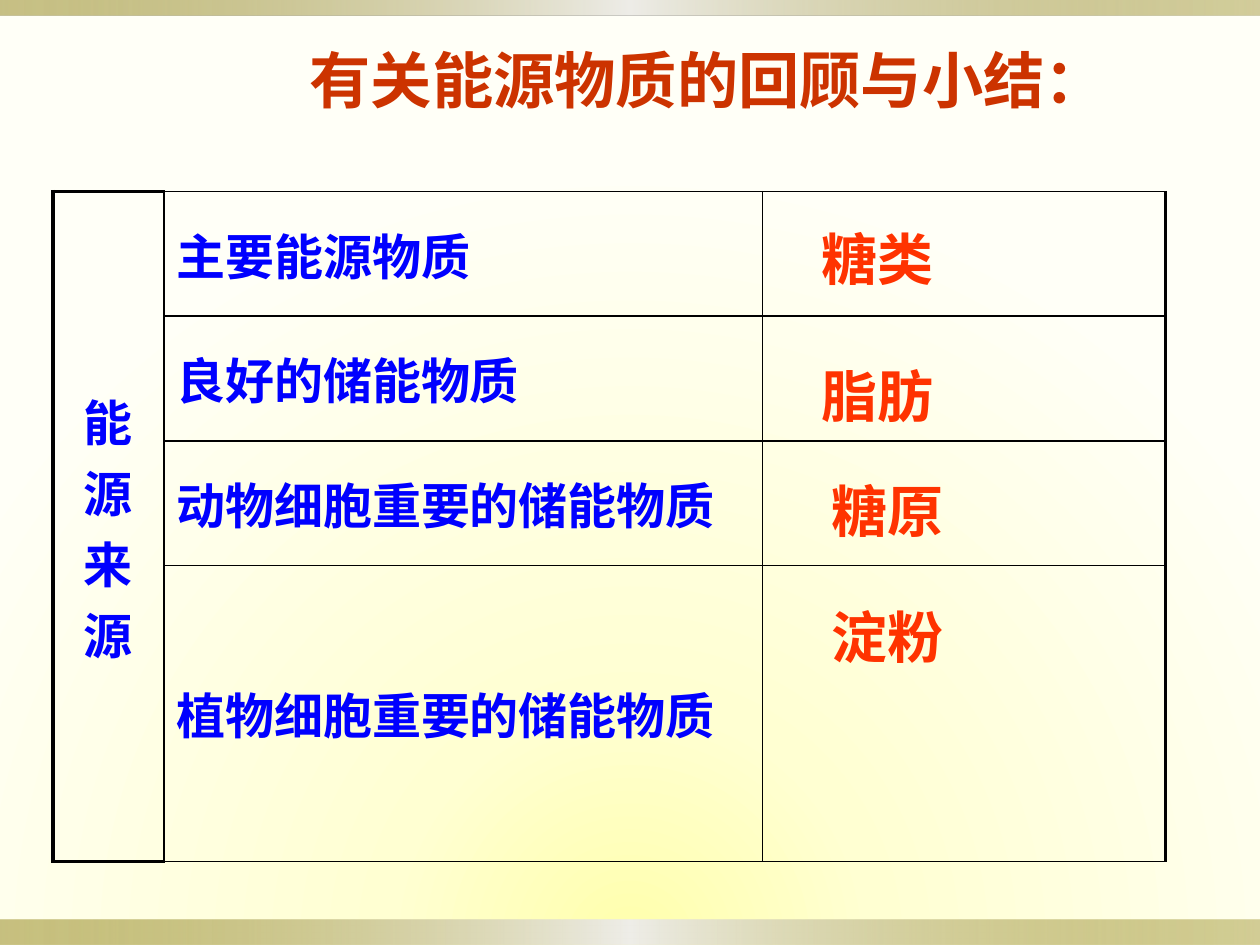
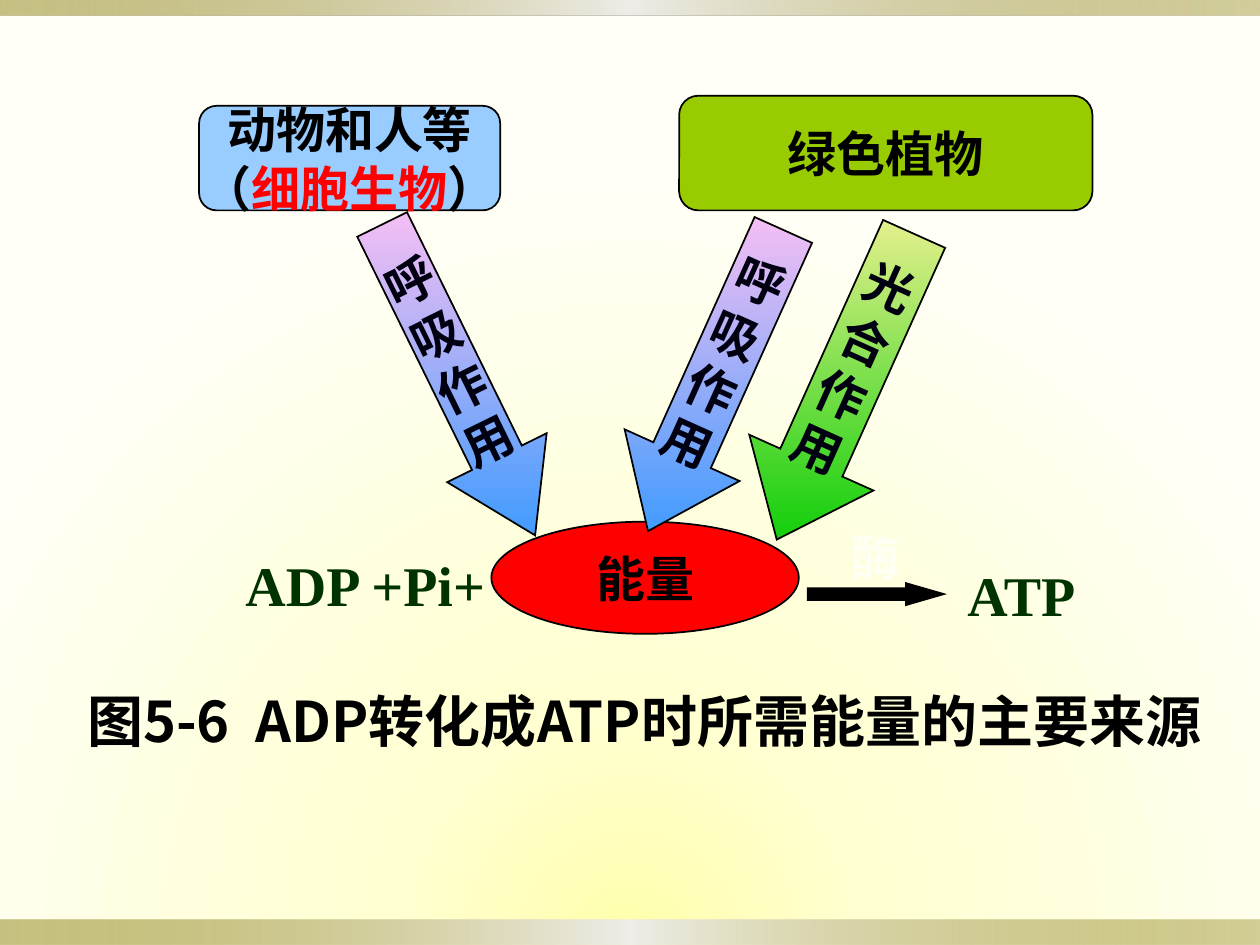
"""Build two biology slides on energy substances and the energy sources of ATP."""
from lxml.etree import SubElement
from pptx import Presentation
from pptx.dml.color import RGBColor
from pptx.enum.lang import MSO_LANGUAGE_ID as LANGUAGE
from pptx.enum.shapes import MSO_SHAPE as SHAPE
from pptx.enum.text import MSO_ANCHOR as ANCHOR, MSO_AUTO_SIZE as AUTO_SIZE, PP_ALIGN as ALIGN
from pptx.oxml.ns import qn
from pptx.util import Inches, Pt

BLACK = RGBColor(0x00, 0x00, 0x00)
INK = RGBColor(0x00, 0x00, 0x10)
RED = RGBColor(0xFF, 0x00, 0x00)
BLUE = RGBColor(0x00, 0x00, 0xFF)
ORANGE = RGBColor(0xFF, 0x33, 0x00)
TITLE_RED = RGBColor(0xCC, 0x33, 0x00)
SKY = RGBColor(0x99, 0xCC, 0xFF)
LEAF = RGBColor(0x99, 0xCC, 0x00)
DARK_GREEN = RGBColor(0x00, 0x33, 0x00)
IVORY = RGBColor(0xFF, 0xFF, 0xF4)
OLIVE = RGBColor(0x91, 0x84, 0x15)
SILVER = RGBColor(0xEE, 0xED, 0xE8)
PINK = RGBColor(0xFC, 0xC0, 0xF3)
AZURE = RGBColor(0x33, 0x99, 0xFF)
LIME = RGBColor(0xEC, 0xF1, 0x91)
GREEN = RGBColor(0x00, 0xCC, 0x00)
GLOW = [(0, RGBColor(0xFF, 0xFF, 0xAC), 100), (31, RGBColor(0xFF, 0xFF, 0xD2), 100),
        (100, RGBColor(0xFF, 0xFF, 0xF7), 100)]
BAND = [(0, OLIVE, 50), (50, SILVER, 100), (100, OLIVE, 40)]
SANS, ARIAL, TIMES = "Noto Sans CJK SC", "Arial", "Times New Roman"


def write(frame, lines, size=28, color=BLACK, font=TIMES, align=ALIGN.LEFT,
          anchor=ANCHOR.TOP, wrap=True, grow=False):
    """Fill a text frame; a line is a string or a list of (text, color) pairs."""
    frame.word_wrap = wrap
    frame.vertical_anchor = anchor
    if grow:
        frame.auto_size = AUTO_SIZE.SHAPE_TO_FIT_TEXT
    for number, line in enumerate(lines):
        para = frame.add_paragraph() if number else frame.paragraphs[0]
        para.alignment = align
        for text, shade in [(line, color)] if isinstance(line, str) else line:
            span = para.add_run()
            span.text = text
            span.font.name = font
            span.font.size = Pt(size)
            span.font.bold = True
            span.font.color.rgb = shade
            span.font.language_id = LANGUAGE.SIMPLIFIED_CHINESE


def blend(fill, owner, stops, angle=None):
    """Set a gradient of (position, color, opacity) stops, circular without an angle."""
    fill.gradient()
    gradient = next(owner.iter(qn("a:gradFill")))
    gradient.clear()
    gradient.set("rotWithShape", "0")
    stop_list = SubElement(gradient, qn("a:gsLst"))
    for position, color, opacity in stops:
        stop = SubElement(stop_list, qn("a:gs"), pos=str(position * 1000))
        shade = SubElement(stop, qn("a:srgbClr"), val=str(color))
        if opacity < 100:
            SubElement(shade, qn("a:alpha"), val=str(opacity * 1000))
    if angle is None:
        circle = SubElement(gradient, qn("a:path"), {"path": "circle"})
        SubElement(circle, qn("a:fillToRect"), l="50000", t="150000", r="50000", b="0")
    else:
        SubElement(gradient, qn("a:lin"), ang=str(angle * 60000), scaled="0")


deck = Presentation()
deck.slide_width, deck.slide_height = Inches(10), Inches(7.5)
master = deck.slide_master
blank = deck.slide_layouts[6]
summary = deck.slides.add_slide(blank)
diagram = deck.slides.add_slide(blank)

blend(master.background.fill, master.element, GLOW)
for top, height in [(7.3, 0.2), (0, 0.12)]:
    band = summary.shapes.add_shape(SHAPE.RECTANGLE, 0, Inches(top), Inches(10), Inches(height))
    band.shadow.inherit = False
    band.line.fill.background()
    blend(band.fill, band.element, BAND, angle=0)
    master.shapes.element.append(band.element)

substances = ["主要能源物质", "良好的储能物质", "动物细胞重要的储能物质", "植物细胞重要的储能物质"]
frame = summary.shapes.add_table(4, 3, Inches(0.42), Inches(1.52), Inches(8.83), Inches(3.96))
table = frame.table
table.first_row = table.horz_banding = False
for column, width in zip(table.columns, [0.88, 4.75, 3.2]):
    column.width = Inches(width)
for row in table.rows:
    row.height = Inches(0.99)
    for index, cell in enumerate(row.cells):
        thick_sides = ["LTB", "", "R"][index]
        for side in "LRTB":
            width = Pt(2.25 if side in thick_sides else 1)
            border = SubElement(cell._tc.get_or_add_tcPr(), qn("a:ln" + side), w=str(width))
            SubElement(SubElement(border, qn("a:solidFill")), qn("a:srgbClr"), val=str(BLACK))
        cell.fill.background()
        cell.vertical_anchor = ANCHOR.MIDDLE
source_cell = table.cell(0, 0)
source_cell.merge(table.cell(3, 0))
write(source_cell.text_frame, ["能源来源"], color=BLUE, font=ARIAL, align=ALIGN.CENTER)
for index, substance in enumerate(substances):
    write(table.cell(index, 1).text_frame, [substance], color=BLUE, font=SANS)

answer_format = dict(size=32, color=ORANGE, font=SANS, grow=True)
formula_format = dict(size=32, color=DARK_GREEN, grow=True)
text_boxes = [
    (summary, "糖类", 6.42, 1.73, 2.33, 0.63, answer_format),
    (summary, "脂肪", 6.42, 2.82, 2.33, 0.63, answer_format),
    (summary, "糖原", 6.5, 3.73, 2.42, 0.63, answer_format),
    (summary, "淀粉", 6.5, 4.73, 2.67, 0.63, answer_format),
    (summary, "有关能源物质的回顾与小结：", 2.33, 0.25, 6.58, 0.75,
     dict(size=35, color=TITLE_RED, font=ARIAL, align=ALIGN.CENTER, anchor=ANCHOR.MIDDLE)),
    (diagram, "图5-6  ADP转化成ATP时所需能量的主要来源", -0.2, 5.4, 10.63, 0.64,
     dict(size=32, font=SANS, align=ALIGN.CENTER, grow=True)),
    (diagram, "ADP +Pi+", 1.85, 4.32, 2.4, 0.64, formula_format),
    (diagram, "ATP", 7.58, 4.4, 1.15, 0.64, dict(formula_format, wrap=False)),
    (diagram, "酶", 6.66, 4.14, 0.8, 0.57, dict(color=IVORY, grow=True)),
]

animal_lines = ["动物和人等", [("（", BLACK), ("细胞生物", RED), ("）", BLACK)]]
respiration = [(0, PINK, 100), (100, AZURE, 100)]
photosynthesis = [(0, LIME, 100), (100, GREEN, 100)]
nodes = [
    (SHAPE.ROUNDED_RECTANGLE, 1.58, 0.84, 2.39, 0.83, [0.167], 0, SKY, animal_lines),
    (SHAPE.ROUNDED_RECTANGLE, 5.39, 0.76, 3.28, 0.91, [0.167], 0, LEAF, ["绿色植物"]),
    (SHAPE.OVAL, 3.9, 4.14, 2.44, 0.89, [], 0, RED, ["能量"]),
    (SHAPE.DOWN_ARROW, 3.2, 1.64, 0.88, 2.75, [0.5, 0.78], 333.8, respiration, list("呼吸作用")),
    (SHAPE.DOWN_ARROW, 5.18, 1.71, 1, 2.62, [0.5, 0.66], 24.2, respiration, list("呼吸作用")),
    (SHAPE.DOWN_ARROW, 6.17, 1.74, 1.08, 2.66, [0.5, 0.62], 24.2, photosynthesis, list("光合作用")),
    (SHAPE.RIGHT_ARROW, 6.42, 4.64, 1.04, 0.15, [0.5, 1.73], 0, BLACK, []),
]
for kind, left, top, width, height, adjustments, rotation, paint, lines in nodes:
    node = diagram.shapes.add_shape(kind, Inches(left), Inches(top), Inches(width), Inches(height))
    node.shadow.inherit = False
    node.rotation = rotation
    for index, value in enumerate(adjustments):
        node.adjustments[index] = value
    if isinstance(paint, RGBColor):
        node.fill.solid()
        node.fill.fore_color.rgb = paint
    else:
        blend(node.fill, node.element, paint, angle=90)
    node.line.color.rgb = BLACK
    node.line.width = Pt(1 if lines else 2.25)
    SubElement(next(node.element.iter(qn("a:ln"))), qn("a:miter"), lim="800000")
    write(node.text_frame, lines, color=INK if rotation else BLACK, align=ALIGN.CENTER,
          anchor=ANCHOR.MIDDLE, wrap=False)

for page, text, left, top, width, height, text_format in text_boxes:
    box = page.shapes.add_textbox(Inches(left), Inches(top), Inches(width), Inches(height))
    write(box.text_frame, [text], **text_format)

deck.save("out.pptx")
